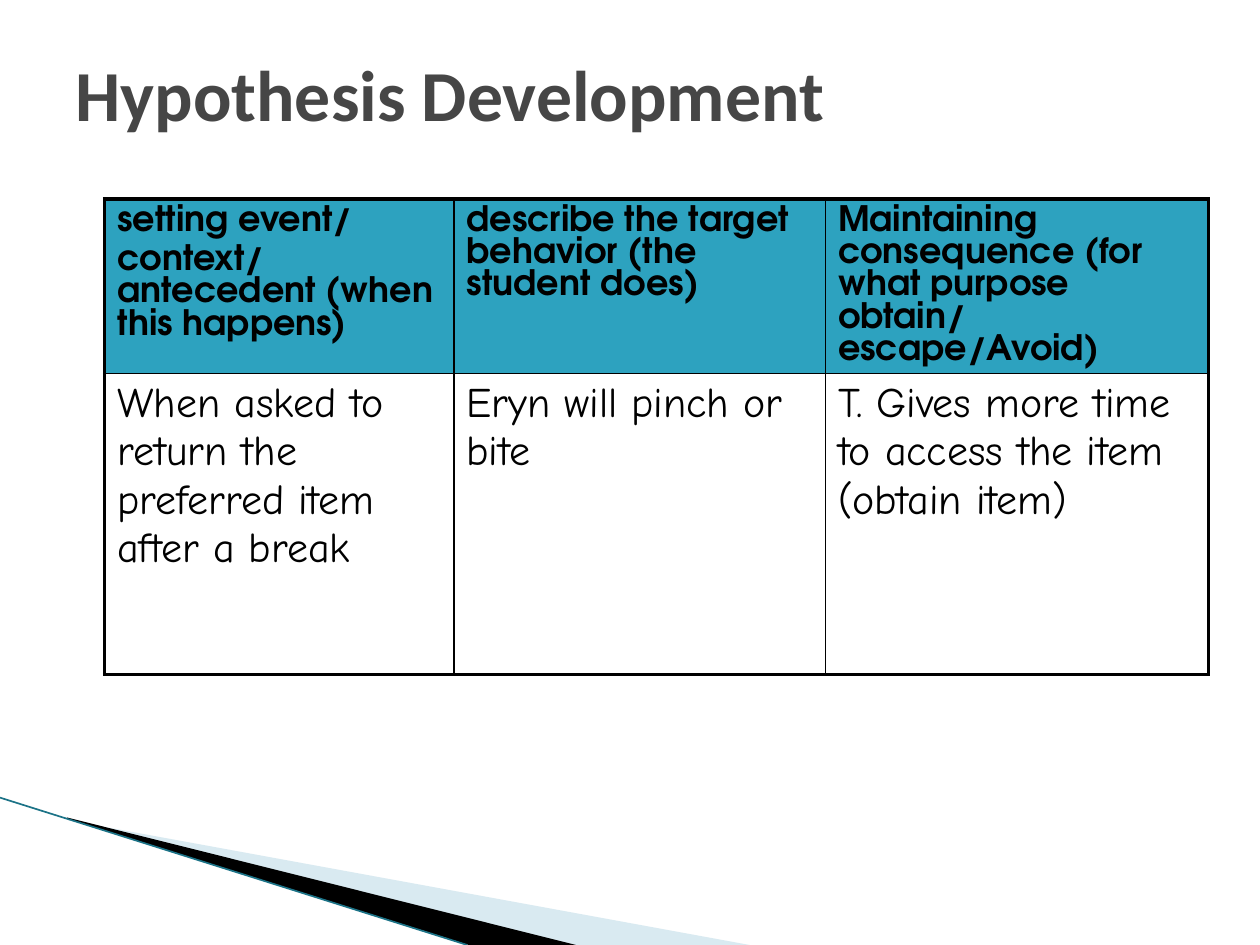
"""Build the Hypothesis Development slide with its three-column table."""
import pptx
import pptx.dml.color
import pptx.enum.shapes
import pptx.enum.text
import pptx.oxml
import pptx.oxml.ns
import pptx.util

Cm, Pt = pptx.util.Cm, pptx.util.Pt
RGBColor = pptx.dml.color.RGBColor

BLACK = RGBColor(0x00, 0x00, 0x00)
GREY = RGBColor(0x46, 0x46, 0x46)
TEAL = RGBColor(0x2D, 0xA2, 0xBF)
DARK_TEAL = RGBColor(0x1C, 0x73, 0x87)
PALE_BLUE = RGBColor(0xA0, 0xCB, 0xDC)

TITLE = "Hypothesis Development"
ROWS = [
    [
        ["setting event/", "context/antecedent (when this happens)"],
        ["describe the target behavior (the student does)"],
        ["Maintaining consequence (for what purpose obtain/ escape/Avoid)"],
    ],
    [
        ["When asked to return the preferred item after a break"],
        ["Eryn will pinch or bite"],
        ["T. Gives more time to access the item (obtain item)"],
    ],
]
STYLES = [
    {"font": "TeX Gyre Adventor", "size": 20, "bold": True, "spacing": Pt(18.5), "fill": TEAL},
    {"font": "Comic Neue", "size": 24, "bold": False, "spacing": 1.0, "fill": None},
]
COL_WIDTHS = [7.04, 7.49, 7.72]
ROW_HEIGHTS = [3.51, 6.07]
TABLE_LEFT, TABLE_TOP = 2.11, 4.01
OUTER, INNER = 2.25, 1

WEDGES = [
    (PALE_BLUE, 40, [(1.4, 16.54), (15.11, 19.05), (11.58, 19.05), (1.4, 16.51)]),
    (BLACK, 100, [(1.35, 16.48), (11.61, 19.05), (9.45, 19.05), (1.37, 16.51)]),
]
EDGE = [(0, 16.08), (9.42, 19.05)]


def set_run(p, text, font, size, bold, color):
    r = p.add_run()
    r.text = text
    r.font.name = font
    r.font.size = Pt(size)
    r.font.bold = bold
    r.font.color.rgb = color


def add_wedge(slide, color, opacity, points):
    pts = [(Cm(x), Cm(y)) for x, y in points]
    fb = slide.shapes.build_freeform(*pts[0])
    fb.add_line_segments(pts[1:], close=True)
    sp = fb.convert_to_shape()
    sp.shadow.inherit = False
    sp.fill.solid()
    sp.fill.fore_color.rgb = color
    sp.line.fill.background()
    if opacity < 100:
        clr = sp.fill._xPr.find(".//" + pptx.oxml.ns.qn("a:srgbClr"))
        alpha = clr.makeelement(pptx.oxml.ns.qn("a:alpha"), {"val": str(opacity * 1000)})
        clr.append(alpha)


def add_edge(slide):
    (x1, y1), (x2, y2) = EDGE
    line = slide.shapes.add_connector(
        pptx.enum.shapes.MSO_CONNECTOR.STRAIGHT, Cm(x1), Cm(y1), Cm(x2), Cm(y2))
    line.line.color.rgb = DARK_TEAL
    line.line.width = Pt(0.95)
    sp_pr = line._element.spPr
    sp_pr.append(sp_pr.makeelement(pptx.oxml.ns.qn("a:effectLst"), {}))


def set_borders(cell, widths):
    tc_pr = cell._tc.get_or_add_tcPr()
    for i, (side, width) in enumerate(zip("LRTB", widths)):
        tc_pr.insert(i, pptx.oxml.parse_xml(
            f'<a:ln{side} {pptx.oxml.ns.nsdecls("a")} w="{Pt(width)}"><a:solidFill>'
            f'<a:srgbClr val="{BLACK}"/></a:solidFill></a:ln{side}>'))


def fill_cell(cell, paragraphs, style):
    if style["fill"] is None:
        cell.fill.background()
    else:
        cell.fill.solid()
        cell.fill.fore_color.rgb = style["fill"]
    tf = cell.text_frame
    for i, text in enumerate(paragraphs):
        p = tf.add_paragraph() if i else tf.paragraphs[0]
        p.line_spacing = style["spacing"]
        if i:
            p.space_before = Pt(4)
        set_run(p, text, style["font"], style["size"], style["bold"], BLACK)


def add_table(slide):
    n_rows, n_cols = len(ROWS), len(COL_WIDTHS)
    table = slide.shapes.add_table(
        n_rows, n_cols, Cm(TABLE_LEFT), Cm(TABLE_TOP),
        Cm(sum(COL_WIDTHS)), Cm(sum(ROW_HEIGHTS))).table
    table.first_row = table.horz_banding = False
    for col, width in zip(table.columns, COL_WIDTHS):
        col.width = Cm(width)
    for row, height in zip(table.rows, ROW_HEIGHTS):
        row.height = Cm(height)
    for r, (texts, style) in enumerate(zip(ROWS, STYLES)):
        for c, paragraphs in enumerate(texts):
            cell = table.cell(r, c)
            fill_cell(cell, paragraphs, style)
            outer = (c == 0, c == n_cols - 1, r == 0, r == n_rows - 1)
            set_borders(cell, [OUTER if edge else INNER for edge in outer])


def main():
    prs = pptx.Presentation()
    prs.slide_width, prs.slide_height = Cm(25.4), Cm(19.05)
    slide = prs.slides.add_slide(prs.slide_layouts[5])

    title = slide.shapes.title
    title.left, title.top, title.width, title.height = Cm(1.27), Cm(0.76), Cm(22.86), Cm(2.21)
    tf = title.text_frame
    tf.vertical_anchor = pptx.enum.text.MSO_ANCHOR.MIDDLE
    p = tf.paragraphs[0]
    p.alignment = pptx.enum.text.PP_ALIGN.LEFT
    set_run(p, TITLE, "Calibri", 41, True, GREY)

    for wedge in WEDGES:
        add_wedge(slide, *wedge)
    add_edge(slide)
    add_table(slide)
    prs.save("out.pptx")


if __name__ == "__main__":
    main()
